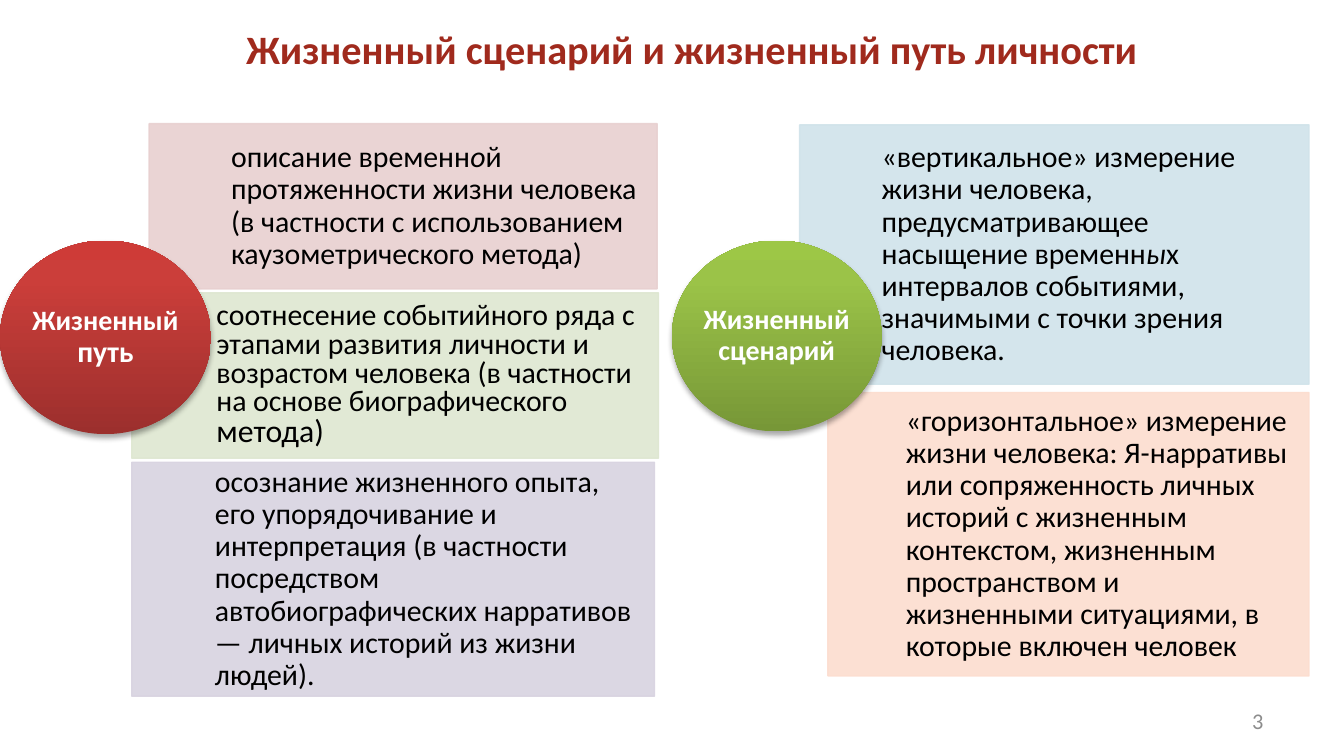
from lxml import etree
from pptx import Presentation
from pptx.dml.color import RGBColor
from pptx.enum.shapes import MSO_SHAPE as Shape
from pptx.enum.text import MSO_ANCHOR as Anchor, PP_ALIGN as Align
from pptx.oxml import parse_xml
from pptx.oxml.ns import nsdecls, qn
from pptx.util import Inches, Pt

BLACK, WHITE = RGBColor(0, 0, 0), RGBColor(255, 255, 255)
TITLE_RED, GREY = RGBColor(0xA0, 0x2A, 0x1D), RGBColor(0x8C, 0x8C, 0x8C)
PINK, SAGE = RGBColor(0xE8, 0xD0, 0xD0), RGBColor(0xDE, 0xE7, 0xD1)
LILAC, SKY = RGBColor(0xD8, 0xD3, 0xE0), RGBColor(0xD0, 0xE3, 0xEA)
PEACH = RGBColor(0xFC, 0xDD, 0xCF)
REDS = [(0, RGBColor(0x9C, 0x2F, 0x2D)), (80, RGBColor(0xCB, 0x3E, 0x3A)),
        (100, RGBColor(0xCE, 0x3B, 0x37))]
GREENS = [(0, RGBColor(0x77, 0x97, 0x37)), (80, RGBColor(0x9B, 0xC3, 0x48)),
          (100, RGBColor(0x9D, 0xC7, 0x46))]

TITLE = "Жизненный сценарий и жизненный путь личности"
PAGE_NUMBER = "3"
BODY = {"size": Pt(16), "color": BLACK}
LABEL = {"size": Pt(15), "color": WHITE, "bold": True}

# Each topic: circle and the panels behind it; a run is (text, changed format)
TOPICS = [
    {"circle": (0, 1.79, 1.57, 1.44), "stops": REDS,
     "label": [("Жизненный ", {}), ("путь", {"size": Pt(16)})],
     "panels": [  # place, text left, colour, line spacing, runs
         ((1.11, 0.92, 3.78, 1.23), 1.72, PINK, 0.9, [
             ("описание временн", {}), ("о", {"italic": True}),
             ("й протяженности жизни человека (в частности с "
              "использованием каузометрического метода)", {})]),
         ((0.98, 2.18, 3.92, 1.23), 1.61, SAGE, 0.8, [
             ("соотнесение событийного ряда с этапами развития личности и "
              "возрастом человека (в частности на основе биографического ", {}),
             ("метода)", {"size": Pt(17)})]),
         ((0.98, 3.44, 3.89, 1.74), 1.6, LILAC, 0.9, [
             ("осознание жизненного опыта, его упорядочивание и интерпретация "
              "(в частности посредством автобиографических нарративов — "
              "личных историй из жизни людей).", {})])]},
    {"circle": (5, 1.79, 1.56, 1.42), "stops": GREENS,
     "label": [("Жизненный сценарий", {})],
     "panels": [
         ((5.95, 0.93, 3.79, 1.93), 6.56, SKY, 0.9, [
             ("«вертикальное» измерение жизни человека, предусматривающее "
              "насыщение временн", {}), ("ы", {"italic": True}),
             ("х интервалов событиями, значимыми с точки зрения человека.", {})]),
         ((6.16, 2.92, 3.58, 2.11), 6.74, PEACH, 0.9, [
             ("«горизонтальное» измерение жизни человека: Я-нарративы или "
              "сопряженность личных историй с жизненным контекстом, жизненным "
              "пространством и жизненными ситуациями, в которые включен "
              "человек", {})])]},
]

# Widescreen page, 16 to 9
deck = Presentation()
deck.slide_width = Inches(10)
deck.slide_height = Inches(10 * 9 / 16)
page = deck.slides.add_slide(deck.slide_layouts[6])


def add_text(place, runs, base, align=Align.LEFT, spacing=1.0,
             insets=(0.1, 0.05, 0.1, 0.05)):
    box = page.shapes.add_textbox(*map(Inches, place))
    frame = box.text_frame
    frame.word_wrap = True
    frame.vertical_anchor = Anchor.MIDDLE
    for side, inset in zip(("left", "top", "right", "bottom"), insets):
        setattr(frame, f"margin_{side}", Inches(inset))
    para = frame.paragraphs[0]
    para.alignment, para.line_spacing = align, spacing
    for text, changes in runs:
        span = para.add_run()
        span.text = text
        span.font.name = "Calibri"
        for key, value in {**base, **changes}.items():
            if key == "color":
                span.font.color.rgb = value
            else:
                setattr(span.font, key, value)


def add_panel(place, color):
    panel = page.shapes.add_shape(Shape.RECTANGLE, *map(Inches, place))
    panel.shadow.inherit = False
    panel.fill.solid()
    panel.fill.fore_color.rgb = color
    panel.line.color.rgb = color
    panel.line.width = Pt(0.75)
    # 90 % opacity for both fill and outline
    for tint in panel._element.spPr.iter(qn("a:srgbClr")):
        etree.SubElement(tint, qn("a:alpha")).set("val", "90000")


def add_circle(place, stops):
    circle = page.shapes.add_shape(Shape.OVAL, *map(Inches, place))
    circle.shadow.inherit = False
    circle.line.fill.background()
    properties = circle._element.spPr
    # Gradient running upwards
    marks = "".join(f'<a:gs pos="{at * 1000}"><a:srgbClr val="{color}"/></a:gs>'
                    for at, color in stops)
    properties.find(qn("a:prstGeom")).addnext(parse_xml(
        f'<a:gradFill {nsdecls("a")} rotWithShape="1"><a:gsLst>{marks}</a:gsLst>'
        '<a:lin ang="16200000" scaled="0"/></a:gradFill>'))
    # Soft shadow below
    properties.find(qn("a:effectLst")).append(parse_xml(
        f'<a:outerShdw {nsdecls("a")} blurRad="{Pt(3.1)}" dist="{Pt(1.8)}" '
        'dir="5400000" rotWithShape="0"><a:srgbClr val="000000">'
        '<a:alpha val="35000"/></a:srgbClr></a:outerShdw>'))


# Title and page number
add_text((0.5, 0.05, 9.3, 0.62), [(TITLE, {})],
         {"size": Pt(21.6), "color": TITLE_RED, "bold": True}, Align.CENTER)
add_text((7.17, 5.21, 2.33, 0.3), [(PAGE_NUMBER, {})],
         {"size": Pt(12), "color": GREY}, Align.RIGHT)

# Topics: panels first, the circle over them
for topic in TOPICS:
    for place, text_left, color, spacing, runs in topic["panels"]:
        left, top, width, height = place
        add_panel(place, color)
        add_text((text_left, top, left + width - text_left, height), runs, BODY,
                 spacing=spacing, insets=(0, 0.12, 0.12, 0.12))
    left, top, width, height = topic["circle"]
    add_circle(topic["circle"], topic["stops"])
    # The label fills the rectangle inscribed in the circle
    side = 0.5 ** 0.5
    add_text((left + width * (1 - side) / 2, top + height * (1 - side) / 2,
              width * side, height * side), topic["label"], LABEL,
             Align.CENTER, 0.9, (0, 0, 0, 0))

deck.save("out.pptx")
